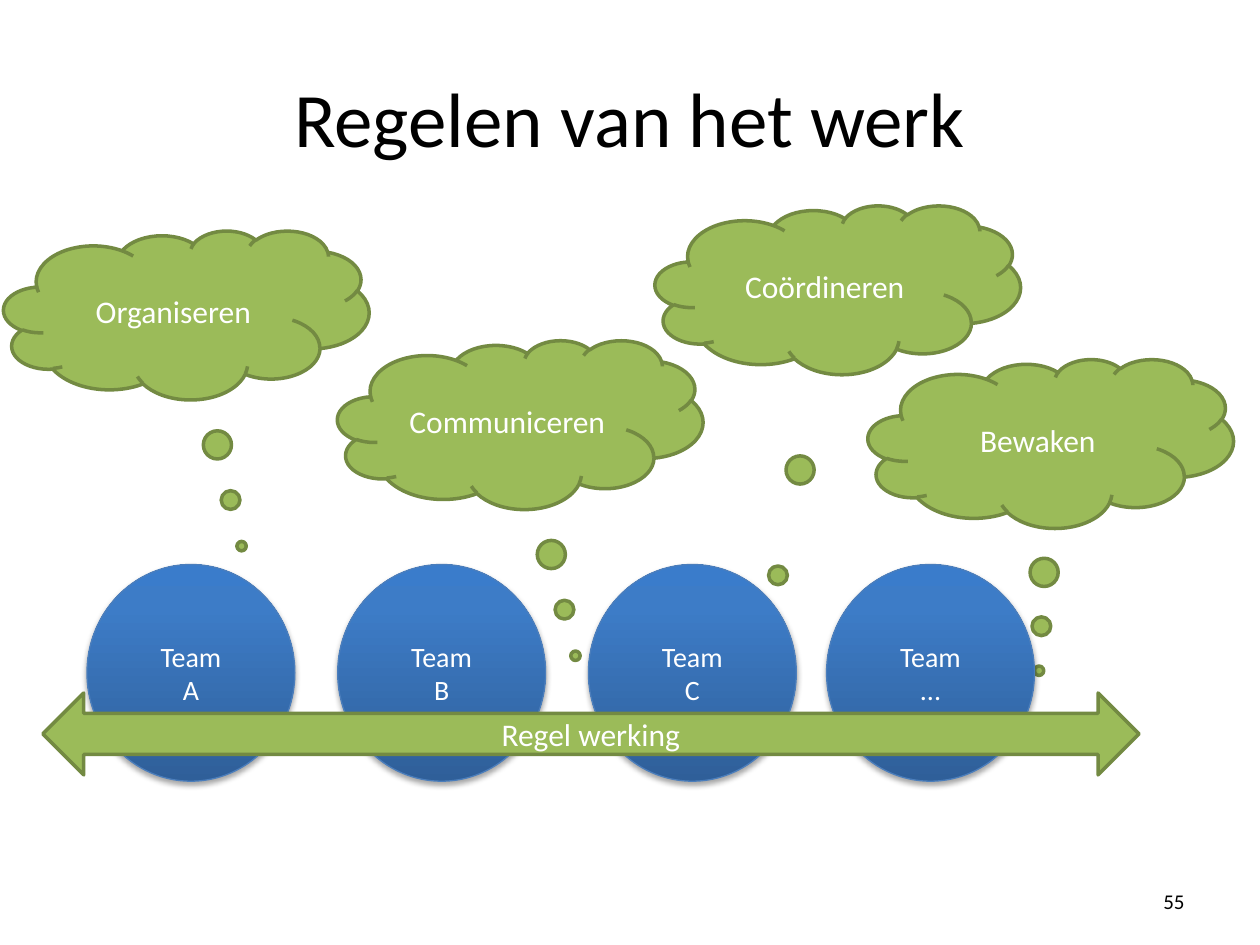
"""Build a slide with four teams, the coordination arrow and its four thought clouds."""
from copy import deepcopy

from lxml.etree import SubElement
from pptx import Presentation
from pptx.dml.color import RGBColor
from pptx.enum.shapes import MSO_SHAPE
from pptx.enum.text import MSO_ANCHOR, PP_ALIGN
from pptx.oxml.ns import qn
from pptx.util import Inches, Pt

BLACK = RGBColor(0x00, 0x00, 0x00)
WHITE = RGBColor(0xFF, 0xFF, 0xFF)
GREEN = RGBColor(0x9B, 0xBB, 0x59)
DARK_GREEN = RGBColor(0x73, 0x8A, 0x42)
BLUE_LINE = RGBColor(0x4B, 0x7E, 0xBC)
BLUE_STOPS = [
    (0, RGBColor(0x2F, 0x5F, 0x99)),
    (0.8, RGBColor(0x3D, 0x7C, 0xC7)),
    (1, RGBColor(0x3A, 0x7C, 0xCB)),
]


def write_text(shape, lines, size, color, alignment=PP_ALIGN.CENTER):
    frame = shape.text_frame
    frame.word_wrap = True
    frame.vertical_anchor = MSO_ANCHOR.MIDDLE
    frame.text = "\n".join(lines)
    for paragraph in frame.paragraphs:
        paragraph.alignment = alignment
        paragraph.font.color.rgb = color
        for name, value in {"name": "Calibri", "size": Pt(size)}.items():
            setattr(paragraph.font, name, value)


def add_green_shape(kind, box, text, adjustments=()):
    shape = slide.shapes.add_shape(kind, *map(Inches, box))
    shape.shadow.inherit = False
    for index, value in enumerate(adjustments):
        shape.adjustments[index] = value
    shape.fill.solid()
    shape.fill.fore_color.rgb = GREEN
    shape.line.color.rgb = DARK_GREEN
    shape.line.width = Pt(2)
    write_text(shape, [text], 18, WHITE)


presentation = Presentation()
presentation.slide_width = Inches(10)
presentation.slide_height = Inches(7.5)
slide = presentation.slides.add_slide(presentation.slide_layouts[6])

for box, text, size, alignment in [
    ((0.5, 0.3, 9, 1.25), "Regelen van het werk", 44, PP_ALIGN.CENTER),
    ((7.17, 6.95, 2.33, 0.4), "55", 12, PP_ALIGN.RIGHT),
]:
    text_box = slide.shapes.add_textbox(*map(Inches, box))
    write_text(text_box, [text], size, BLACK, alignment)

for text, left, top, tail in [
    ("Communiceren", 2.68, 2.7, (0.151, 1.369)),
    ("Coördineren", 5.2, 1.63, (-0.219, 2.261)),
    ("Bewaken", 6.89, 2.85, (-0.032, 1.346)),
    ("Organiseren", 0.03, 1.83, (0.151, 1.369)),
]:
    add_green_shape(MSO_SHAPE.CLOUD_CALLOUT, (left, top, 2.9, 1.34), text, tail)

for team, left in [("A", 0.69), ("B", 2.68), ("C", 4.67), ("...", 6.56)]:
    circle = slide.shapes.add_shape(
        MSO_SHAPE.OVAL, Inches(left), Inches(4.48), Inches(1.65), Inches(1.72)
    )
    circle.line.color.rgb = BLUE_LINE
    circle.line.width = Pt(0.75)
    circle.fill.gradient()
    circle.fill.gradient_angle = 90
    properties = circle.element.spPr
    stop_list = properties.find(qn("a:gradFill")).find(qn("a:gsLst"))
    stop_list.append(deepcopy(stop_list[-1]))
    for stop, (position, color) in zip(circle.fill.gradient_stops, BLUE_STOPS):
        stop.position = position
        stop.color.rgb = color
    circle.shadow.inherit = False
    shadow = SubElement(
        properties.find(qn("a:effectLst")), qn("a:outerShdw"),
        blurRad=str(Pt(3.1)), dist=str(Pt(1.8)), dir="5400000", rotWithShape="0",
    )
    shadow_color = SubElement(shadow, qn("a:srgbClr"), val=str(BLACK))
    SubElement(shadow_color, qn("a:alpha"), val="35000")
    write_text(circle, ["Team", team], 16, WHITE)

add_green_shape(MSO_SHAPE.LEFT_RIGHT_ARROW, (0.34, 5.5, 8.7, 0.65), "Regel werking")

presentation.save("out.pptx")
